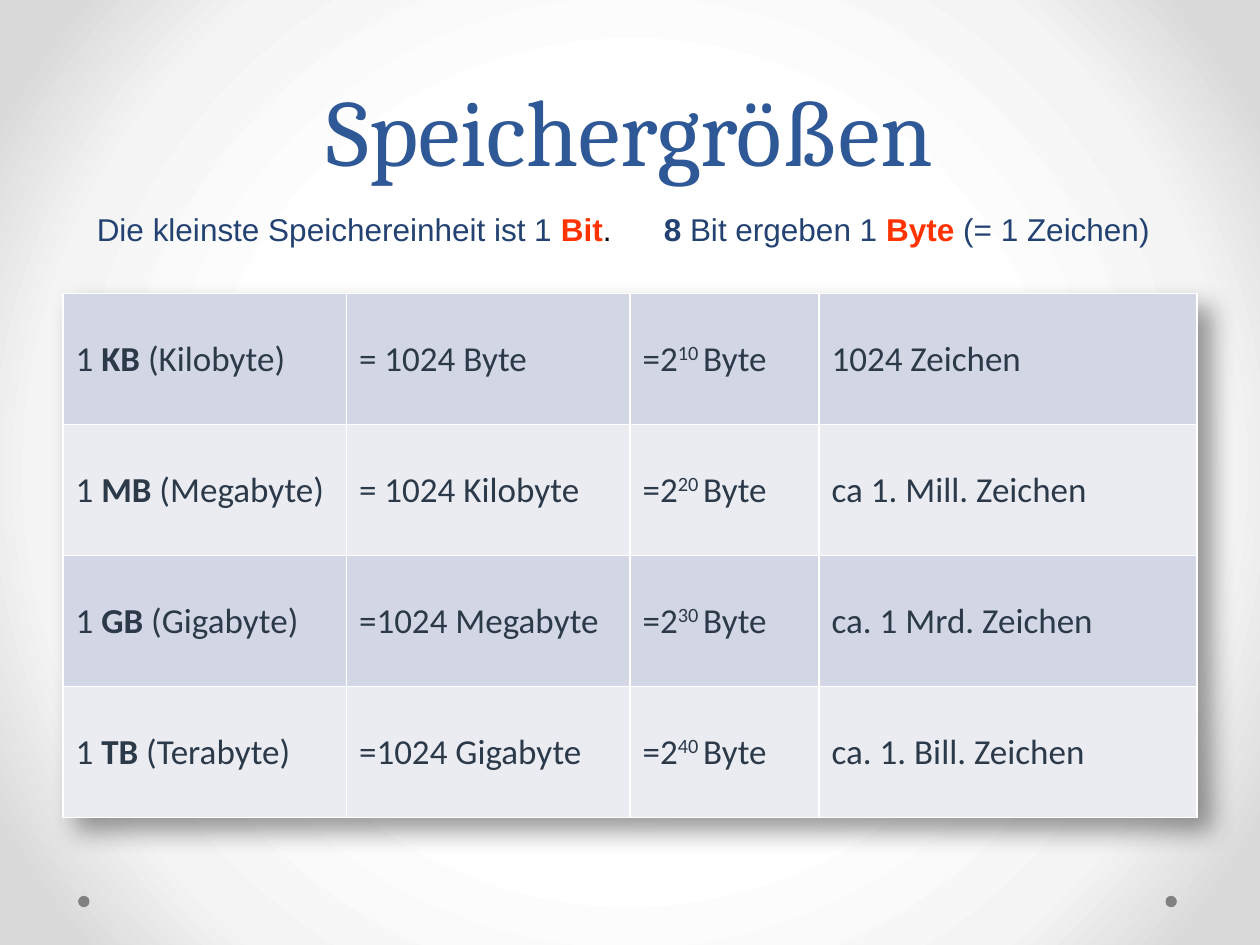
from dataclasses import dataclass

from pptx import Presentation
from pptx.dml.color import RGBColor
from pptx.enum import shapes, text
from pptx.oxml import parse_xml
from pptx.oxml.ns import nsdecls
from pptx.util import Inches, Pt


@dataclass(frozen=True)
class Theme:
    title: str = "2F5897"
    body: str = "234271"
    accent: str = "FF3300"
    black: str = "000000"
    cell_text: str = "2B3949"
    bands: tuple = ("D2D6E5", "EAECF2")
    border: str = "FFFFFF"
    dot: str = "808080"
    backdrop: tuple = ((50, "FFFFFF"), (76, "F4F4F4"), (92, "DADADA"))
    title_font: str = "Cambria"
    body_font: str = "Arial"
    table_font: str = "Calibri"
    title_size: int = 54
    body_size: int = 18
    table_size: int = 20


THEME = Theme()
COLUMN_WIDTHS = (2.25, 2.25, 1.5, 3)
ROW_HEIGHT = 1.04
SIZES = (
    ("KB", "Kilobyte", "= 1024 Byte", 10, "1024 Zeichen"),
    ("MB", "Megabyte", "= 1024 Kilobyte", 20, "ca 1. Mill. Zeichen"),
    ("GB", "Gigabyte", "=1024 Megabyte", 30, "ca. 1 Mrd. Zeichen"),
    ("TB", "Terabyte", "=1024 Gigabyte", 40, "ca. 1. Bill. Zeichen"),
)


def add_run(paragraph, words, font, size, color, bold=False, raised=False):
    run = paragraph.add_run()
    run.text = words
    run.font.name = font
    run.font.size = Pt(size)
    run.font.bold = bold
    run.font.color.rgb = RGBColor.from_string(color)
    if raised:
        run.font._element.set("baseline", "30000")


def set_background(slide):
    stops = "".join(
        f'<a:gs pos="{position * 1000}"><a:srgbClr val="{color}"/></a:gs>'
        for position, color in THEME.backdrop
    )
    slide._element.cSld.insert(0, parse_xml(
        f'<p:bg {nsdecls("p", "a")}><p:bgPr><a:gradFill rotWithShape="1">'
        f'<a:gsLst>{stops}</a:gsLst><a:path path="circle">'
        '<a:fillToRect l="50000" t="50000" r="50000" b="50000"/></a:path>'
        '</a:gradFill><a:effectLst/></p:bgPr></p:bg>'
    ))


def add_dot(slide, left):
    dot = slide.shapes.add_shape(
        shapes.MSO_SHAPE.OVAL, Inches(left), Inches(7.11), Inches(0.09), Inches(0.09)
    )
    dot.shadow.inherit = False
    dot.fill.solid()
    dot.fill.fore_color.rgb = RGBColor.from_string(THEME.dot)
    dot.line.fill.background()


def set_title(slide, words):
    title = slide.shapes.title
    title.left, title.top = Inches(0.5), Inches(0.13)
    title.width, title.height = Inches(9), Inches(1.39)
    title.text_frame.vertical_anchor = text.MSO_ANCHOR.BOTTOM
    paragraph = title.text_frame.paragraphs[0]
    paragraph.alignment = text.PP_ALIGN.CENTER
    paragraph.line_spacing = Pt(58)
    add_run(paragraph, words, THEME.title_font, THEME.title_size, THEME.title)


def add_intro(slide):
    box = slide.shapes.add_textbox(Inches(0.67), Inches(1.62), Inches(8.66), Inches(0.4))
    box.text_frame.word_wrap = True
    paragraph = box.text_frame.paragraphs[0]
    paragraph.space_before = Pt(15)
    paragraph._p.get_or_add_pPr().append(parse_xml(
        f'<a:tabLst {nsdecls("a")}><a:tab pos="{Inches(4.5)}" algn="l"/></a:tabLst>'
    ))
    for words, color, bold in (
        ("Die kleinste Speichereinheit ist 1 ", THEME.body, False),
        ("Bit", THEME.accent, True),
        (".\t", THEME.black, False),
        ("8", THEME.body, True),
        (" Bit ergeben 1 ", THEME.body, False),
        ("Byte ", THEME.accent, True),
        ("(= 1 Zeichen)", THEME.body, False),
    ):
        add_run(paragraph, words, THEME.body_font, THEME.body_size, color, bold)


def add_borders(cell):
    properties = cell._tc.get_or_add_tcPr()
    for index, side in enumerate(("lnL", "lnR", "lnT", "lnB")):
        properties.insert(index, parse_xml(
            f'<a:{side} {nsdecls("a")} w="{Pt(1)}"><a:solidFill>'
            f'<a:srgbClr val="{THEME.border}"/></a:solidFill></a:{side}>'
        ))


def fill_cell(cell, runs, fill, line_spacing):
    """Write runs given as (words, options of add_run)."""
    cell.fill.solid()
    cell.fill.fore_color.rgb = RGBColor.from_string(fill)
    cell.vertical_anchor = text.MSO_ANCHOR.MIDDLE
    add_borders(cell)
    paragraph = cell.text_frame.paragraphs[0]
    paragraph.line_spacing = line_spacing
    for words, options in runs:
        add_run(paragraph, words, THEME.table_font, THEME.table_size,
                THEME.cell_text, **options)


def add_table_shadow(table):
    table._tbl.tblPr.insert(0, parse_xml(
        f'<a:effectLst {nsdecls("a")}><a:outerShdw blurRad="{Inches(0.2)}" '
        f'dist="{Inches(0.15)}" dir="2700000" algn="tl" rotWithShape="0">'
        '<a:srgbClr val="000000"><a:alpha val="40000"/></a:srgbClr>'
        '</a:outerShdw></a:effectLst>'
    ))


def add_size_table(slide):
    table = slide.shapes.add_table(
        len(SIZES), len(COLUMN_WIDTHS), Inches(0.5), Inches(2.33),
        Inches(sum(COLUMN_WIDTHS)), Inches(ROW_HEIGHT * len(SIZES)),
    ).table
    table.first_row = table.horz_banding = False
    add_table_shadow(table)
    for column, width in zip(table.columns, COLUMN_WIDTHS):
        column.width = Inches(width)
    for index, (unit, name, amount, power, characters) in enumerate(SIZES):
        table.rows[index].height = Inches(ROW_HEIGHT)
        contents = (
            [("1 ", {}), (unit, {"bold": True}), (f" ({name})", {})],
            [(amount, {})],
            [("=2", {}), (f"{power} ", {"raised": True}), ("Byte", {})],
            [(characters, {})],
        )
        for column, runs in enumerate(contents):
            fill_cell(table.cell(index, column), runs, THEME.bands[index % 2],
                      0.93 if column < 2 else 1.0)


def main():
    presentation = Presentation()
    presentation.slide_width, presentation.slide_height = Inches(10), Inches(7.5)
    slide = presentation.slides.add_slide(presentation.slide_layouts[5])
    set_background(slide)
    for left in (9.25, 0.62):
        add_dot(slide, left)
    set_title(slide, "Speichergrößen")
    add_size_table(slide)
    add_intro(slide)
    presentation.save("out.pptx")


if __name__ == "__main__":
    main()
